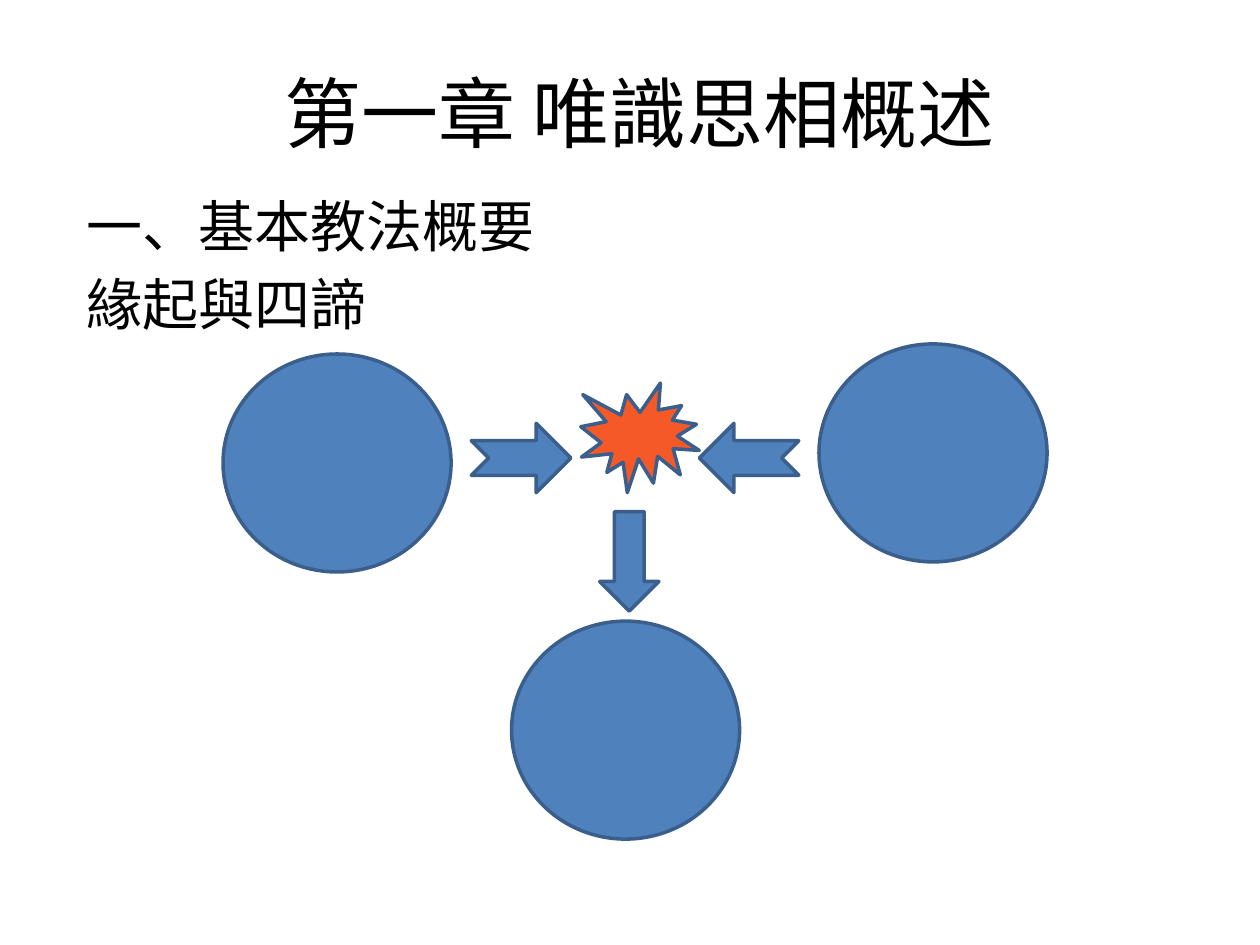
from pptx import Presentation
from pptx.dml.color import RGBColor
from pptx.enum.shapes import MSO_SHAPE as Shape
from pptx.enum.text import MSO_ANCHOR as Anchor, PP_ALIGN as Align
from pptx.util import Inches, Pt

BLACK = RGBColor(0x00, 0x00, 0x00)
BLUE = RGBColor(0x4F, 0x81, 0xBD)
DARK_BLUE = RGBColor(0x3A, 0x5F, 0x8C)
ORANGE = RGBColor(0xF6, 0x59, 0x28)

TITLE_FORMAT = {"alignment": Align.CENTER}
BODY_FORMAT = {"alignment": Align.LEFT, "space_before": Pt(6.4)}


def add_text(slide, box, lines, size, anchor, para_format):
    """Place one paragraph per line in the box."""
    tf = slide.shapes.add_textbox(*map(Inches, box)).text_frame
    tf.word_wrap = True
    tf.vertical_anchor = anchor
    for i, line in enumerate(lines):
        p = tf.paragraphs[0] if i == 0 else tf.add_paragraph()
        for name, value in para_format.items():
            setattr(p, name, value)
        r = p.add_run()
        r.text = line
        for name, value in {"name": "Calibri", "size": Pt(size)}.items():
            setattr(r.font, name, value)
        r.font.color.rgb = BLACK


def add_part(slide, kind, left, top, size, fill=BLUE, rotation=0):
    """Place one outlined shape of the diagram."""
    sp = slide.shapes.add_shape(kind, *map(Inches, (left, top, *size)))
    sp.shadow.inherit = False
    sp.rotation = rotation
    sp.fill.solid()
    sp.fill.fore_color.rgb = fill
    sp.line.color.rgb = DARK_BLUE
    sp.line.width = Pt(2)


def add_diagram(slide, left, top):
    """Two circles meet in a burst, which leads to a third circle."""
    circle, side_arrow = (1.81, 1.73), (0.79, 0.55)

    # Circles
    for x, y in ((0, 0.08), (4.73, 0), (2.29, 2.2)):
        add_part(slide, Shape.OVAL, left + x, top + y, circle)

    # Arrows towards the burst, then down from it
    for x, rotation in ((1.97, 0), (3.78, 180)):
        add_part(slide, Shape.NOTCHED_RIGHT_ARROW, left + x, top + 0.63,
                 side_arrow, rotation=rotation)
    add_part(slide, Shape.DOWN_ARROW, left + 2.99, top + 1.33, (0.47, 0.79))

    # Burst
    add_part(slide, Shape.EXPLOSION1, left + 2.84, top + 0.31, (0.94, 0.87),
             fill=ORANGE)


def main():
    prs = Presentation()
    prs.slide_width, prs.slide_height = Inches(10), Inches(7.5)
    slide = prs.slides.add_slide(prs.slide_layouts[6])

    add_text(slide, (0.59, 0.36, 8.98, 1.05), ["第一章 唯識思相概述"],
             44, Anchor.MIDDLE, TITLE_FORMAT)
    add_text(slide, (0.59, 1.47, 8.9, 5.35), ["一、基本教法概要", "緣起與四諦"],
             32, Anchor.TOP, BODY_FORMAT)
    add_diagram(slide, 1.77, 2.73)

    prs.save("out.pptx")


if __name__ == "__main__":
    main()
